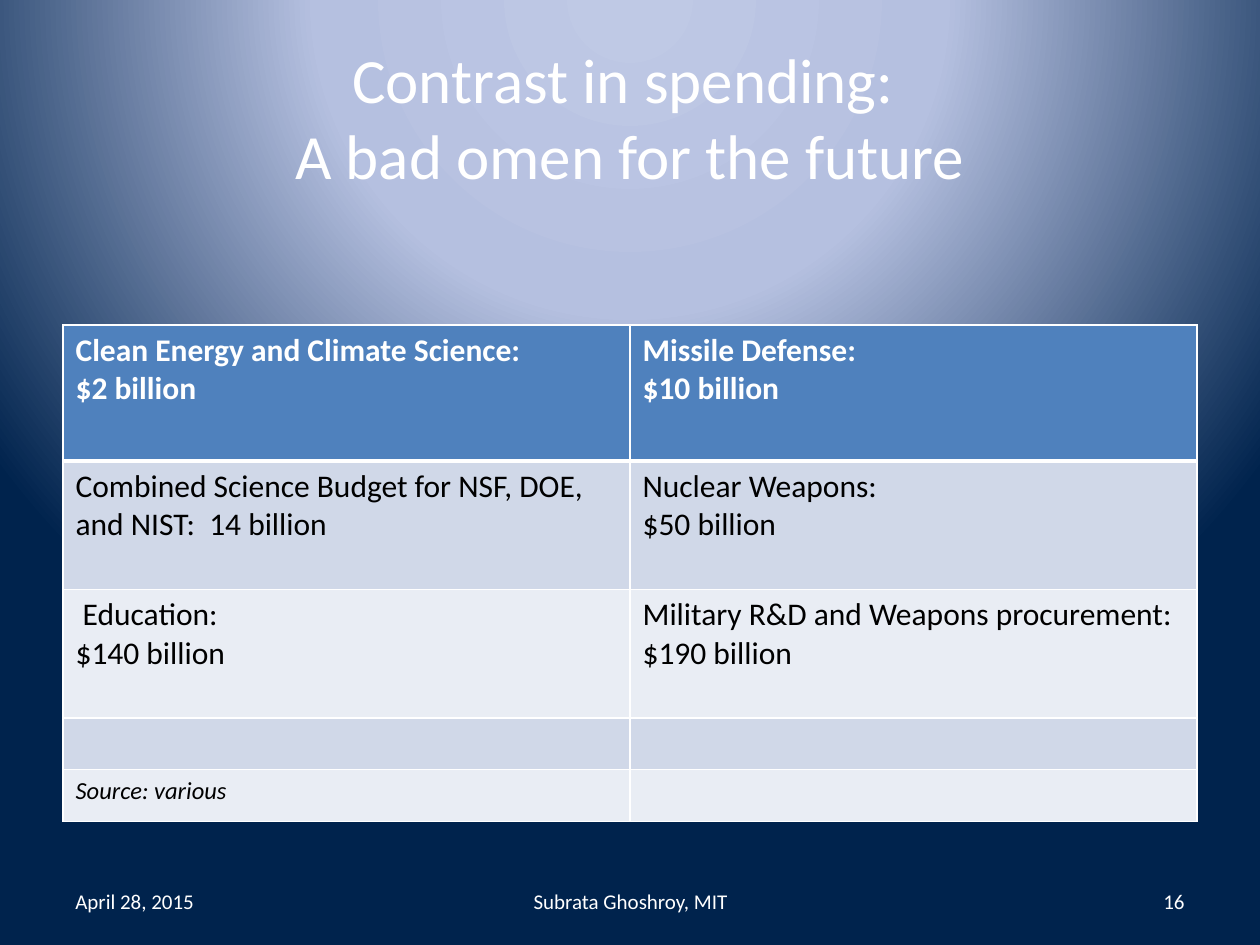
from lxml.etree import SubElement
from pptx import Presentation
from pptx.dml.color import RGBColor
from pptx.enum.text import MSO_ANCHOR, PP_ALIGN
from pptx.oxml import parse_xml
from pptx.oxml.ns import nsdecls, qn
from pptx.util import Inches, Pt

WHITE, BLACK = "FFFFFF", "000000"
HEADER, BAND_DARK, BAND_LIGHT = "4F81BD", "D0D8E8", "E9EDF4"
STOPS = [(0, "BFC9E5"), (40, "B5C0E0"), (100, "00234D")]
ROWS = [
    (1.08, "Clean Energy and Climate Science:\n$2 billion", "Missile Defense:\n$10 billion"),
    (1.02, "Combined Science Budget for NSF, DOE, and NIST:  14 billion",
     "Nuclear Weapons:\n$50 billion"),
    (1.02, " Education:\n$140 billion", "Military R&D and Weapons procurement:\n$190 billion"),
    (0.41, "", ""),
    (0.41, "Source: various", ""),
]
FOOTERS = [
    ("April 28, 2015", 0.5, 2.33, PP_ALIGN.LEFT),
    ("Subrata Ghoshroy, MIT", 3.42, 3.17, PP_ALIGN.CENTER),
    ("16", 7.17, 2.33, PP_ALIGN.RIGHT),
]


def rgb(value):
    return RGBColor.from_string(value)


def write(tf, text, size=18, color=WHITE, bold=False, italic=False,
          align=PP_ALIGN.LEFT, anchor=MSO_ANCHOR.TOP, font="Calibri"):
    tf.word_wrap = True
    tf.vertical_anchor = anchor
    tf.text = text
    for p in tf.paragraphs:
        p.alignment = align
        for f in [p.font] + [r.font for r in p.runs]:
            f.name, f.size, f.bold, f.italic = font, Pt(size), bold, italic
            f.color.rgb = rgb(color)


class Deck:
    def __init__(self, prs):
        self.prs = prs
        self.s = prs.slides.add_slide(prs.slide_layouts[5])

    def background(self, stops):
        self.s.background.fill.gradient()
        old = next(self.s.element.iter(qn("a:gradFill")))
        items = "".join(
            f'<a:gs pos="{pos * 1000}"><a:srgbClr val="{color}"/></a:gs>'
            for pos, color in stops)
        old.getparent().replace(old, parse_xml(
            f'<a:gradFill {nsdecls("a")} rotWithShape="1"><a:gsLst>{items}</a:gsLst>'
            '<a:path path="circle"><a:fillToRect l="50000" t="-80000" r="50000" b="180000"/>'
            '</a:path></a:gradFill>'))

    def title(self, text, x, y, w, h):
        sp = self.s.shapes.title
        sp.left, sp.top, sp.width, sp.height = map(Inches, (x, y, w, h))
        write(sp.text_frame, text, size=36, align=PP_ALIGN.CENTER, anchor=MSO_ANCHOR.MIDDLE)

    def text(self, text, x, y, w, h, **style):
        sp = self.s.shapes.add_textbox(*map(Inches, (x, y, w, h)))
        write(sp.text_frame, text, **style)

    def borders(self, cell, **widths):
        tcPr = cell._tc.get_or_add_tcPr()
        for i, side in enumerate("LRTB"):
            ln = SubElement(tcPr, qn(f"a:ln{side}"), w=str(Pt(widths.get(side, 1))))
            fill = SubElement(ln, qn("a:solidFill"))
            SubElement(fill, qn("a:srgbClr"), val=WHITE)
            tcPr.insert(i, ln)

    def table(self, rows, x, y, w):
        height = sum(row[0] for row in rows)
        tbl = self.s.shapes.add_table(
            len(rows), 2, *map(Inches, (x, y, w, height))).table
        for i, (row_height, *texts) in enumerate(rows):
            tbl.rows[i].height = Inches(row_height)
            head, last = i == 0, i == len(rows) - 1
            fill = HEADER if head else (BAND_LIGHT, BAND_DARK)[i % 2]
            for cell, text in zip(tbl.rows[i].cells, texts):
                cell.fill.solid()
                cell.fill.fore_color.rgb = rgb(fill)
                self.borders(cell, T=3 if i == 1 else 1, B=3 if head else 1)
                write(cell.text_frame, text, bold=head, color=WHITE if head else BLACK,
                      size=14 if last else 18, italic=last)


def main():
    prs = Presentation()
    prs.slide_width, prs.slide_height = Inches(10), Inches(7.5)
    deck = Deck(prs)
    deck.background(STOPS)
    deck.title("Contrast in spending: \vA bad omen for the future", 0.5, 0.3, 9, 1.25)
    deck.table(ROWS, 0.5, 2.58, 9)
    for text, x, w, align in FOOTERS:
        deck.text(text, x, 6.95, w, 0.4, size=12, align=align, anchor=MSO_ANCHOR.MIDDLE)
    prs.save("out.pptx")


if __name__ == "__main__":
    main()
